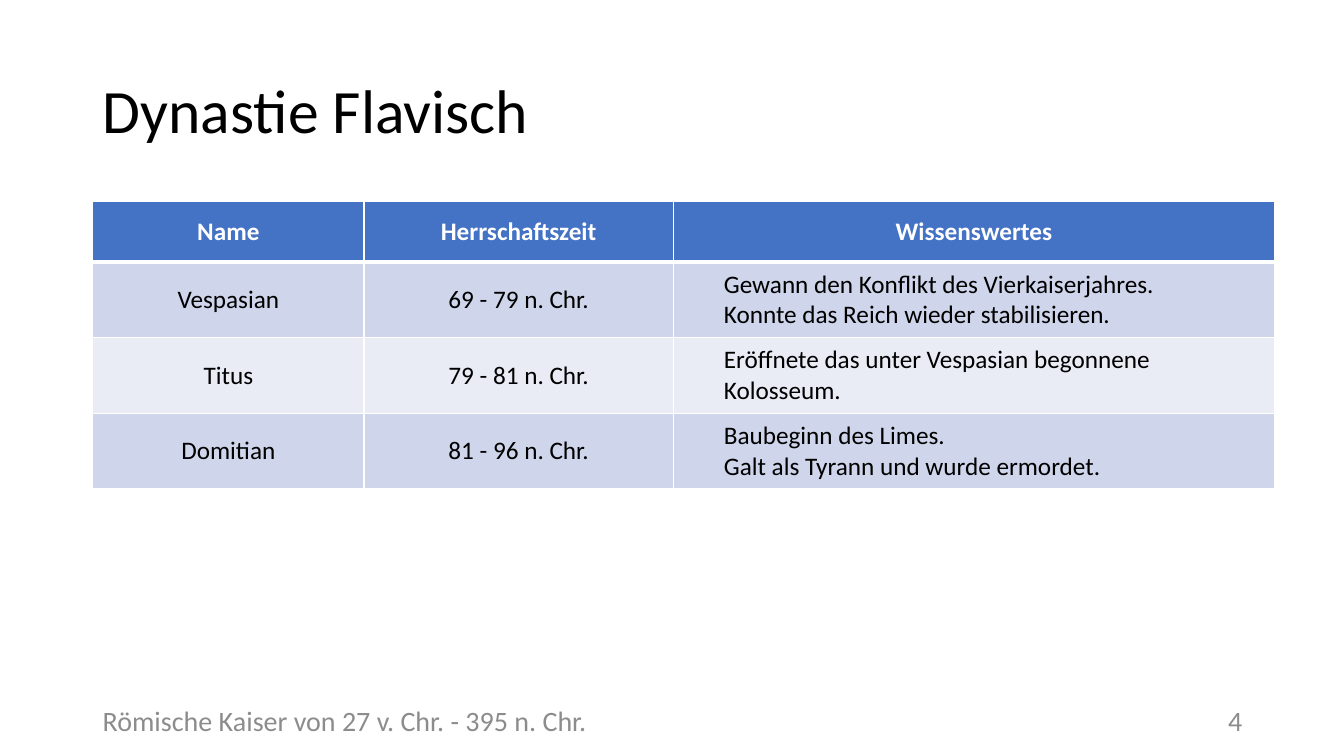
from lxml import etree
from pptx import Presentation
from pptx.dml.color import RGBColor
from pptx.enum import text as t
from pptx.oxml import ns
from pptx.util import Pt

PX = 9144  # 100 px to the inch

BLACK = RGBColor(0x00, 0x00, 0x00)
WHITE = RGBColor(0xFF, 0xFF, 0xFF)
GREY = RGBColor(0x8C, 0x8C, 0x8C)
HEADER_BLUE = RGBColor(0x44, 0x72, 0xC4)
BANDS = [RGBColor(0xCF, 0xD5, 0xEA), RGBColor(0xE9, 0xEB, 0xF5)]

LEFT = 92
COLUMN_WIDTHS = [269, 307, 596]
ROW_HEIGHTS = [60, 75, 75, 75]
EMPERORS = [
    ("Name", "Herrschaftszeit", "Wissenswertes"),
    ("Vespasian", "69 - 79 n. Chr.",
     "Gewann den Konflikt des Vierkaiserjahres.\vKonnte das Reich wieder stabilisieren."),
    ("Titus", "79 - 81 n. Chr.",
     "Eröffnete das unter Vespasian begonnene\vKolosseum."),
    ("Domitian", "81 - 96 n. Chr.",
     "Baubeginn des Limes.\vGalt als Tyrann und wurde ermordet."),
]


def write(frame, content, size, color, align, bold=False):
    """Put one formatted paragraph into a text frame and return it."""
    frame.text = content
    paragraph = frame.paragraphs[0]
    paragraph.alignment = align
    for run in paragraph.runs:
        run.font.color.rgb = color
        for key, value in {"name": "Calibri", "size": Pt(size), "bold": bold}.items():
            setattr(run.font, key, value)
    return paragraph


def add_borders(cell, bottom_width):
    properties = cell._tc.get_or_add_tcPr()
    for side, width in {"lnL": 1, "lnR": 1, "lnT": 1, "lnB": bottom_width}.items():
        line = etree.SubElement(properties, ns.qn(f"a:{side}"), w=str(Pt(width)))
        fill = etree.SubElement(line, ns.qn("a:solidFill"))
        etree.SubElement(fill, ns.qn("a:srgbClr"), val=str(WHITE))


deck = Presentation()
deck.slide_width, deck.slide_height = 1333 * PX, 750 * PX
slide = deck.slides.add_slide(deck.slide_layouts[5])

# Title
title = slide.shapes.title
place = {"left": LEFT, "top": 40, "width": 1150, "height": 145}
for key, value in place.items():
    setattr(title, key, value * PX)
title.text_frame.vertical_anchor = t.MSO_ANCHOR.MIDDLE
heading = write(title.text_frame, "Dynastie Flavisch", 44, BLACK, t.PP_ALIGN.LEFT)
heading.line_spacing = 0.9

# Emperors
emperors = slide.shapes.add_table(
    len(ROW_HEIGHTS), len(COLUMN_WIDTHS), LEFT * PX, 200 * PX,
    sum(COLUMN_WIDTHS) * PX, sum(ROW_HEIGHTS) * PX).table
for column, width in zip(emperors.columns, COLUMN_WIDTHS):
    column.width = width * PX
for row, height in zip(emperors.rows, ROW_HEIGHTS):
    row.height = height * PX

cell_format = {"margin_left": 0, "margin_right": 0, "margin_top": 0,
               "margin_bottom": 0, "vertical_anchor": t.MSO_ANCHOR.MIDDLE}
for r, entries in enumerate(EMPERORS):
    header = r == 0
    for c, entry in enumerate(entries):
        cell = emperors.cell(r, c)
        for key, value in cell_format.items():
            setattr(cell, key, value)
        add_borders(cell, 3 if header else 1)
        cell.fill.solid()
        cell.fill.fore_color.rgb = HEADER_BLUE if header else BANDS[(r - 1) % 2]
        fact = c == 2 and not header
        paragraph = write(cell.text_frame, entry, 18, WHITE if header else BLACK,
                          t.PP_ALIGN.LEFT if fact else t.PP_ALIGN.CENTER, header)
        if fact:
            paragraph.level = 1
            indent = paragraph._p.get_or_add_pPr()
            indent.set("marL", str(50 * PX))
            indent.set("indent", "0")

# Footer
for content, left, width, align in [
    ("4", 942, 300, t.PP_ALIGN.RIGHT),
    ("Römische Kaiser von 27 v. Chr. - 395 n. Chr.", LEFT, 800, t.PP_ALIGN.LEFT),
]:
    frame = slide.shapes.add_textbox(left * PX, 695 * PX, width * PX, 40 * PX).text_frame
    frame.word_wrap = True
    frame.vertical_anchor = t.MSO_ANCHOR.MIDDLE
    write(frame, content, 20, GREY, align)

deck.save("out.pptx")
